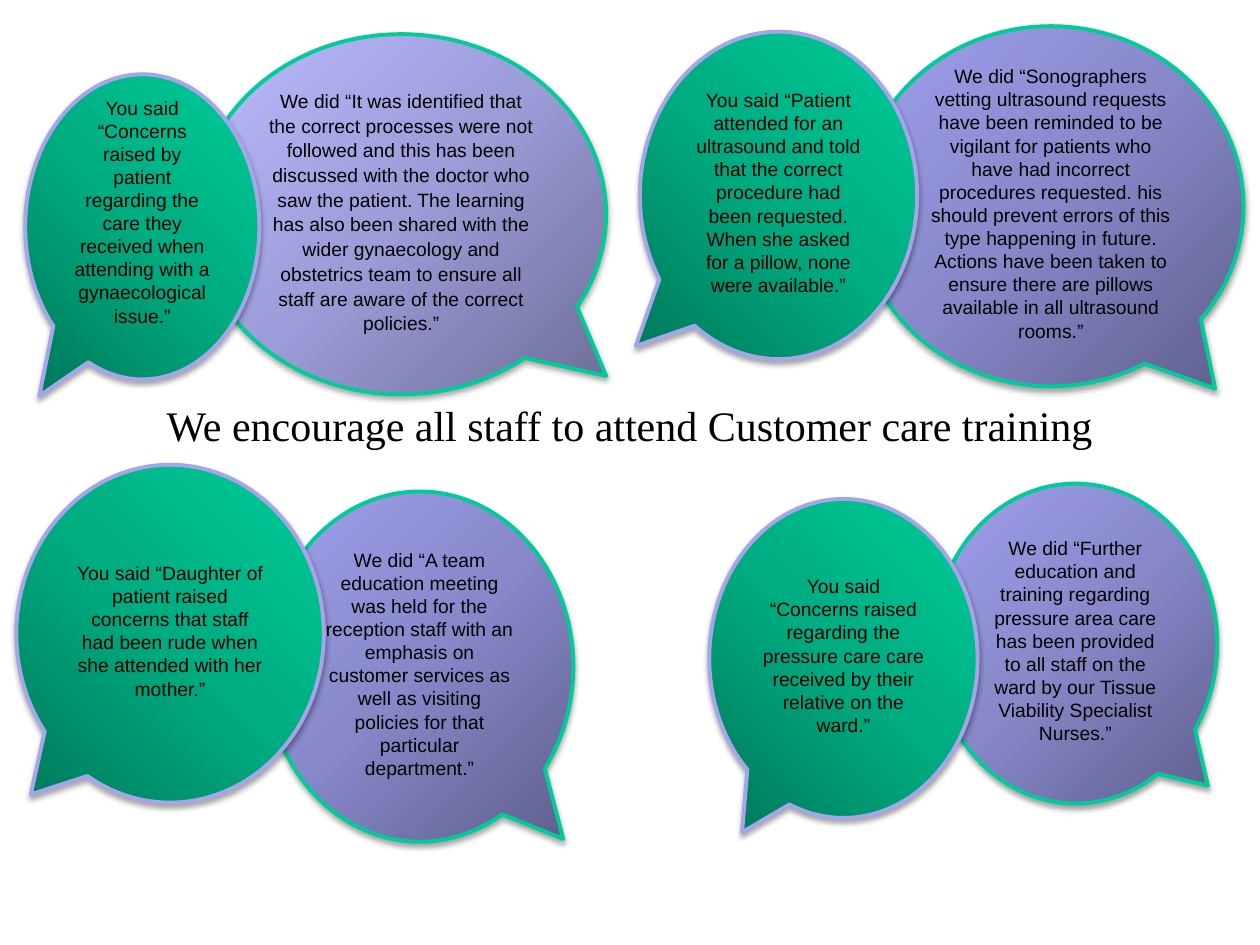
from typing import NamedTuple

from lxml.etree import SubElement
from pptx import Presentation
from pptx.dml.color import RGBColor
from pptx.enum.shapes import MSO_SHAPE
from pptx.enum.text import MSO_ANCHOR, PP_ALIGN
from pptx.oxml import parse_xml
from pptx.oxml.ns import nsdecls, qn
from pptx.slide import Slide
from pptx.util import Cm, Pt

HUES = {
    "ink": "000000",
    "green": "00CC99",
    "lilac": "A5A5E9",
}


class Look(NamedTuple):
    stops: tuple[str, str, str]
    edge: str
    focus: str


class Bubble(NamedTuple):
    left: float
    top: float
    width: float
    height: float
    tip: tuple[float, float]
    look: Look
    text: str
    lead: float = 1.0
    foot: float = 0.25


SAID = Look(("00795B", "00AC81", "00CC99"), "lilac", 'l="0" t="100000" r="100000" b="0"')
DID = Look(("5F5F8D", "8787C9", "A0A0EE"), "green", 'l="100000" t="100000" r="0" b="0"')
PALE = DID._replace(stops=("6E6E98", "9C9CD9", "BBBBFF"))

BUBBLES = [
    Bubble(18.82, 9.75, 5.72, 6.45, (0.467, 0.444), DID,
           "We did “Further education and training regarding pressure area care has been "
           "provided to all staff on the ward by our Tissue Viability Specialist Nurses.”"),
    Bubble(5.36, 9.91, 6.2, 7.06, (0.467, 0.492), DID,
           "We did “A team education meeting was held for the reception staff with an "
           "emphasis on customer services as well as visiting policies for that "
           "particular department.”"),
    Bubble(0.33, 9.37, 6.2, 6.81, (-0.453, 0.476), SAID,
           "You said “Daughter of patient raised concerns that staff had been rude when "
           "she attended with her mother.”"),
    Bubble(3.96, 0.69, 8.26, 7.26, (0.5, 0.449), PALE,
           "We did “It was identified that the correct processes were not followed and "
           "this has been discussed with the doctor who saw the patient. The learning has "
           "also been shared with the wider gynaecology and obstetrics team to ensure all "
           "staff are aware of the correct policies.”", lead=1.07),
    Bubble(17.3, 0.53, 7.77, 7.26, (0.426, 0.506), DID,
           "We did “Sonographers vetting ultrasound requests have been reminded to be "
           "vigilant for patients who have had incorrect procedures requested. his should "
           "prevent errors of this type happening in future. Actions have been taken to "
           "ensure there are pillows available in all ultrasound rooms.”"),
    Bubble(14.3, 10.06, 5.41, 6.43, (-0.378, 0.545), SAID,
           "You said “Concerns raised regarding the pressure care care received by their "
           "relative on the ward.”"),
    Bubble(12.9, 0.64, 5.59, 6.6, (-0.515, 0.46), SAID,
           "You said “Patient attended for an ultrasound and told that the correct "
           "procedure had been requested. When she asked for a pillow, none were "
           "available.”"),
    Bubble(0.51, 1.5, 4.72, 6.15, (-0.44, 0.554), SAID,
           "You said “Concerns raised by patient regarding the care they received when "
           "attending with a gynaecological issue.”", foot=0.75),
]


def write(frame, text: str, face: str, size: int, lead: float = 1.0) -> None:
    frame.word_wrap = True
    para = frame.paragraphs[0]
    para.text = text
    para.alignment = PP_ALIGN.CENTER
    para.line_spacing = lead
    para.font.name = face
    para.font.size = Pt(size)
    para.font.color.rgb = RGBColor.from_string(HUES["ink"])


def shade(shape, look: Look) -> None:
    stops = "".join(
        f'<a:gs pos="{i * 50000}"><a:srgbClr val="{hue}"/></a:gs>'
        for i, hue in enumerate(look.stops)
    )
    grad = parse_xml(
        f'<a:gradFill {nsdecls("a")} rotWithShape="1"><a:gsLst>{stops}</a:gsLst>'
        f'<a:path path="circle"><a:fillToRect {look.focus}/></a:path></a:gradFill>'
    )
    shape._element.spPr.find(qn("a:prstGeom")).addnext(grad)


def cast(shape) -> None:
    shape.shadow.inherit = False
    group = shape._element.spPr.find(qn("a:effectLst"))
    drop = SubElement(group, qn("a:outerShdw"), blurRad="40000", dist="23000",
                      dir="5400000", rotWithShape="0")
    tint = SubElement(drop, qn("a:srgbClr"), val=HUES["ink"])
    SubElement(tint, qn("a:alpha"), val="35000")


def draw(slide: Slide, item: Bubble) -> None:
    shape = slide.shapes.add_shape(
        MSO_SHAPE.OVAL_CALLOUT,
        Cm(item.left), Cm(item.top), Cm(item.width), Cm(item.height),
    )
    shape.adjustments[0], shape.adjustments[1] = item.tip
    shade(shape, item.look)
    shape.line.color.rgb = RGBColor.from_string(HUES[item.look.edge])
    shape.line.width = Pt(2.25)
    cast(shape)
    frame = shape.text_frame
    frame.vertical_anchor = MSO_ANCHOR.MIDDLE
    frame.margin_bottom = Cm(item.foot)
    write(frame, item.text, "Arial", 11, item.lead)


def main() -> None:
    deck = Presentation()
    deck.slide_width, deck.slide_height = Cm(25.4), Cm(19.05)
    slide = deck.slides.add_slide(deck.slide_layouts[6])
    for item in BUBBLES:
        draw(slide, item)
    title = slide.shapes.add_textbox(Cm(1.9), Cm(7.92), Cm(21.6), Cm(1.27))
    write(title.text_frame, "We encourage all staff to attend Customer care training",
          "Times New Roman", 24)
    deck.save("out.pptx")


if __name__ == "__main__":
    main()
